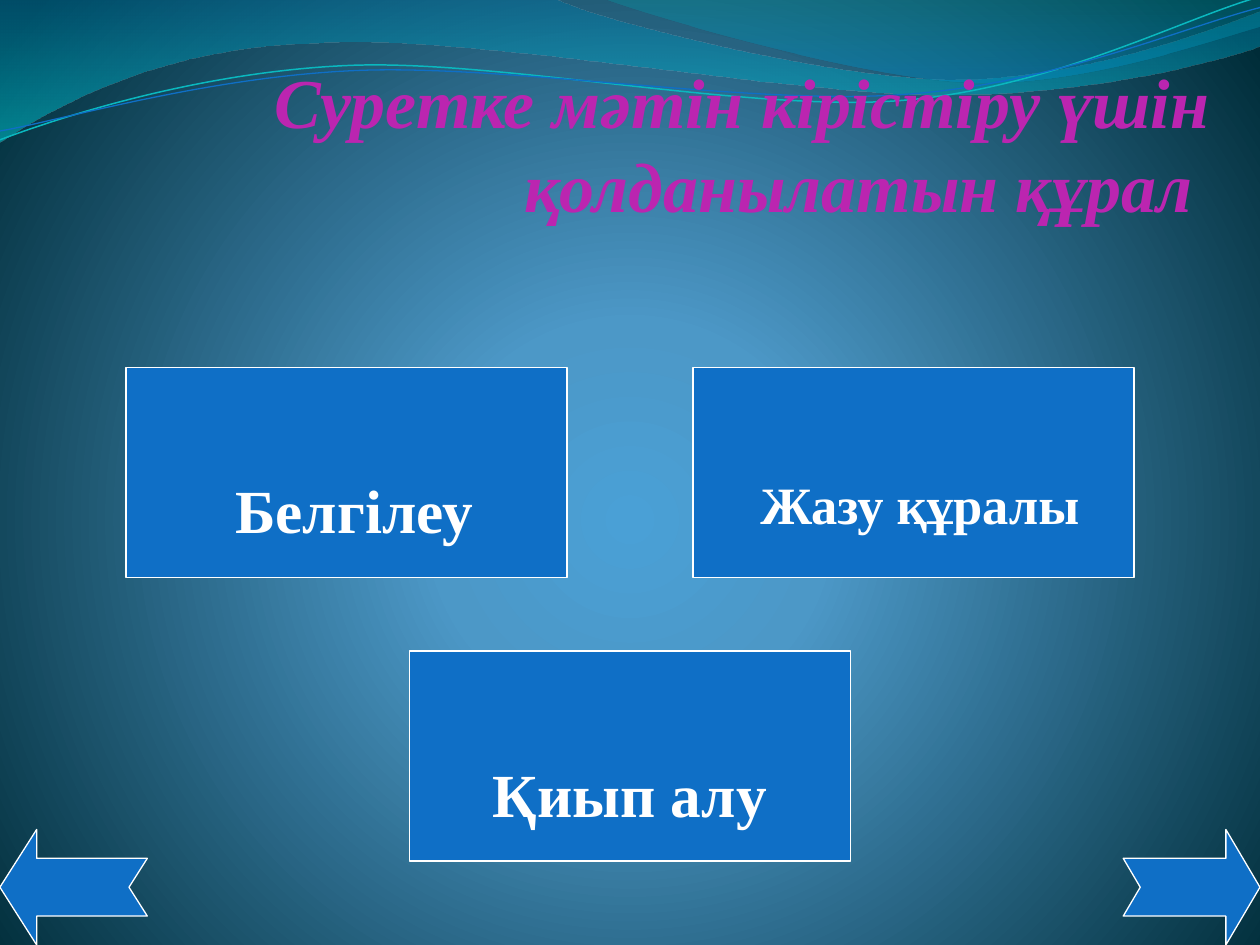
"""Build a quiz slide with three answer boxes and two navigation arrows."""
import pptx
import pptx.dml.color
import pptx.enum.shapes
import pptx.enum.text
import pptx.oxml
import pptx.oxml.ns
import pptx.util

WIDTH, HEIGHT = 10, 7.5
COLUMN, ROW = WIDTH / 40, HEIGHT / 90
FONT = "Times New Roman"
BLUE, WHITE, PURPLE = "0F6FC6", "FFFFFF", "BB25B0"
SHAPES = pptx.enum.shapes.MSO_SHAPE
ANCHOR = pptx.enum.text.MSO_ANCHOR
ALIGN = pptx.enum.text.PP_ALIGN

BROAD_WAVE = [
    [(0, 0)], [(4.4, -0.01)],
    [(4.76, 0.17), (6.64, 0.63), (7.58, 0.63)],
    [(8.53, 0.63), (9.58, 0.26), (10, 0.09)], [(10.01, 0.36)],
    [(9.83, 0.44), (8.7, 0.76), (7.46, 0.75)],
    [(6.22, 0.75), (3.82, 0.28), (2.57, 0.34)],
    [(1.29, 0.36), (0.46, 0.83), (-0.01, 1.13)], [(0, 0)],
]
CORNER_WAVE = [
    [(4.79, -0.01)],
    [(5.09, 0.11), (6.82, 0.62), (7.69, 0.65)],
    [(8.56, 0.69), (9.61, 0.32), (10, 0.21)], [(10, 0)], [(4.79, -0.01)],
]
TEAL_LINE = [
    [(0, 1.11)],
    [(0.48, 0.93), (1.58, 0.57), (2.77, 0.52)],
    [(3.95, 0.47), (5.93, 0.89), (7.13, 0.8)],
    [(8.33, 0.71), (9.38, 0.15), (9.98, -0.02)],
]
BLUE_LINE = [
    [(0, 1.04)],
    [(0.47, 0.96), (1.64, 0.61), (2.83, 0.56)],
    [(4.03, 0.51), (5.97, 0.84), (7.17, 0.75)],
    [(8.36, 0.67), (9.41, 0.21), (10, 0.06)],
]


def rgb(value):
    """Turn a hex string into a colour."""
    return pptx.dml.color.RGBColor.from_string(value)


def grid(*cells):
    """Convert alternating columns and rows to lengths."""
    return [pptx.util.Inches(cell * (ROW if index % 2 else COLUMN))
            for index, cell in enumerate(cells)]


def gradient(stops, direction):
    """Make a gradient fill from (position, colour, opacity) stops."""
    marks = "".join(
        f'<a:gs pos="{place * 1000}"><a:srgbClr val="{color}">'
        f'<a:alpha val="{opacity * 1000}"/></a:srgbClr></a:gs>'
        for place, color, opacity in stops)
    return pptx.oxml.parse_xml(
        f'<a:gradFill {pptx.oxml.ns.nsdecls("a")} rotWithShape="1">'
        f'<a:gsLst>{marks}</a:gsLst>{direction}</a:gradFill>')


def replace_fill(parent, fill):
    """Swap the gradient inside an element for another one."""
    parent.replace(parent.find(pptx.oxml.ns.qn("a:gradFill")), fill)


def paint_background(page):
    """Fill the page with a glow centred below the middle."""
    page.background.fill.gradient()
    stops = [(0, "4AA0D6", 100), (25, "4C98C7", 100), (100, "002C38", 100)]
    glow = ('<a:path path="circle"><a:fillToRect l="10000" t="110000" '
            'r="10000" b="100000"/></a:path>')
    properties = page.background._cSld.bg.bgPr
    replace_fill(properties, gradient(stops, glow))


def bend(outline, segments):
    """Turn each run of three straight edges into one cubic curve."""
    qn = pptx.oxml.ns.qn
    edges = list(outline._element.iter(qn("a:lnTo")))
    for segment in segments[1:]:
        group, edges = edges[:len(segment)], edges[len(segment):]
        if len(group) == 3:
            curve = pptx.oxml.parse_xml(
                f'<a:cubicBezTo {pptx.oxml.ns.nsdecls("a")}/>')
            group[0].addprevious(curve)
            for edge in group:
                curve.append(edge[0])
                edge.getparent().remove(edge)


def add_outline(page, segments, close):
    """Draw a freeform of lines and cubic curves."""
    start, *rest = [(round(x * 100), round(y * 100))
                    for segment in segments for x, y in segment]
    builder = page.shapes.build_freeform(
        *start, scale=pptx.util.Inches(0.01))
    builder.add_line_segments(rest, close=close)
    outline = builder.convert_to_shape()
    bend(outline, segments)
    outline.shadow.inherit = False
    return outline


def add_wave(page, segments, stops):
    """Add a closed wave with a downward gradient."""
    wave = add_outline(page, segments, True)
    wave.line.fill.background()
    wave.fill.gradient()
    replace_fill(wave._element.spPr,
                 gradient(stops, '<a:lin ang="5400000" scaled="0"/>'))


def add_wave_line(page, segments, color, weight):
    """Add an open curved line."""
    curve = add_outline(page, segments, False)
    curve.fill.background()
    curve.line.color.rgb = rgb(color)
    curve.line.width = pptx.util.Pt(weight)


def add_blue_shape(page, kind, *cells):
    """Add a blue preset shape with a thin white line."""
    shape = page.shapes.add_shape(kind, *grid(*cells))
    shape.shadow.inherit = False
    shape.fill.solid()
    shape.fill.fore_color.rgb = rgb(BLUE)
    shape.line.color.rgb = rgb(WHITE)
    shape.line.width = pptx.util.Pt(0.75)
    return shape


def add_arrow(page, column, columns, notch, flipped=False):
    """Add a navigation arrow on the bottom edge."""
    arrow = add_blue_shape(page, SHAPES.NOTCHED_RIGHT_ARROW,
                           column, 79, columns, 11)
    arrow.adjustments[0] = 0.5
    arrow.adjustments[1] = notch
    if flipped:
        arrow._element.spPr.xfrm.set("flipH", "1")


def write(paragraph, text, size, color, align):
    """Write bold serif text into a paragraph."""
    paragraph.text = text
    paragraph.alignment = align
    font = paragraph.font
    font.name, font.size, font.bold = FONT, pptx.util.Pt(size), True
    font.color.rgb = rgb(color)


def add_answer(page, column, row, text, size):
    """Add an answer box with its text one line below the middle."""
    box = add_blue_shape(page, SHAPES.RECTANGLE, column, row, 14, 20)
    frame = box.text_frame
    frame.word_wrap = False
    frame.vertical_anchor = ANCHOR.BOTTOM
    frame.margin_bottom = box.height // 2 - pptx.util.Pt(size * 1.2)
    write(frame.paragraphs[0], text, size, WHITE, ALIGN.CENTER)


def add_question(page, text):
    """Write the question into the subtitle placeholder, above the waves."""
    title, question = page.shapes.title, page.placeholders[1]
    title._element.getparent().remove(title._element)
    page.shapes._spTree.append(question._element)
    (question.left, question.top,
     question.width, question.height) = grid(1.68, 5, 37, 81)
    frame = question.text_frame
    frame.auto_size = pptx.enum.text.MSO_AUTO_SIZE.NONE
    frame.vertical_anchor = ANCHOR.TOP
    frame.margin_left, frame.margin_right = 0, pptx.util.Inches(0.07)
    paragraph = frame.paragraphs[0]
    write(paragraph, text, 40, PURPLE, ALIGN.RIGHT)
    paragraph.font.italic = True
    paragraph.space_before = pptx.util.Pt(4)


def main():
    """Build and save the deck."""
    deck = pptx.Presentation()
    deck.slide_width = pptx.util.Inches(WIDTH)
    deck.slide_height = pptx.util.Inches(HEIGHT)
    page = deck.slides.add_slide(deck.slide_layouts[0])
    paint_background(page)
    add_wave(page, BROAD_WAVE, [(0, "0074A1", 45), (100, "00C6CF", 55)])
    add_wave(page, CORNER_WAVE, [(0, "00A1A9", 30), (80, "008BBF", 45)])
    add_wave_line(page, TEAL_LINE, "0AB8BF", 0.85)
    add_wave_line(page, BLUE_LINE, BLUE, 0.75)
    add_arrow(page, 35.66, 4.34, 0.295)
    add_arrow(page, 0, 4.68, 0.318, flipped=True)
    add_question(page, " Суретке мәтін кірістіру үшін қолданылатын құрал ")
    add_answer(page, 4, 35, " Белгілеу", 35)
    add_answer(page, 22, 35, " Жазу құралы", 30)
    add_answer(page, 13, 62, "Қиып алу", 35)
    deck.save("out.pptx")


if __name__ == "__main__":
    main()
